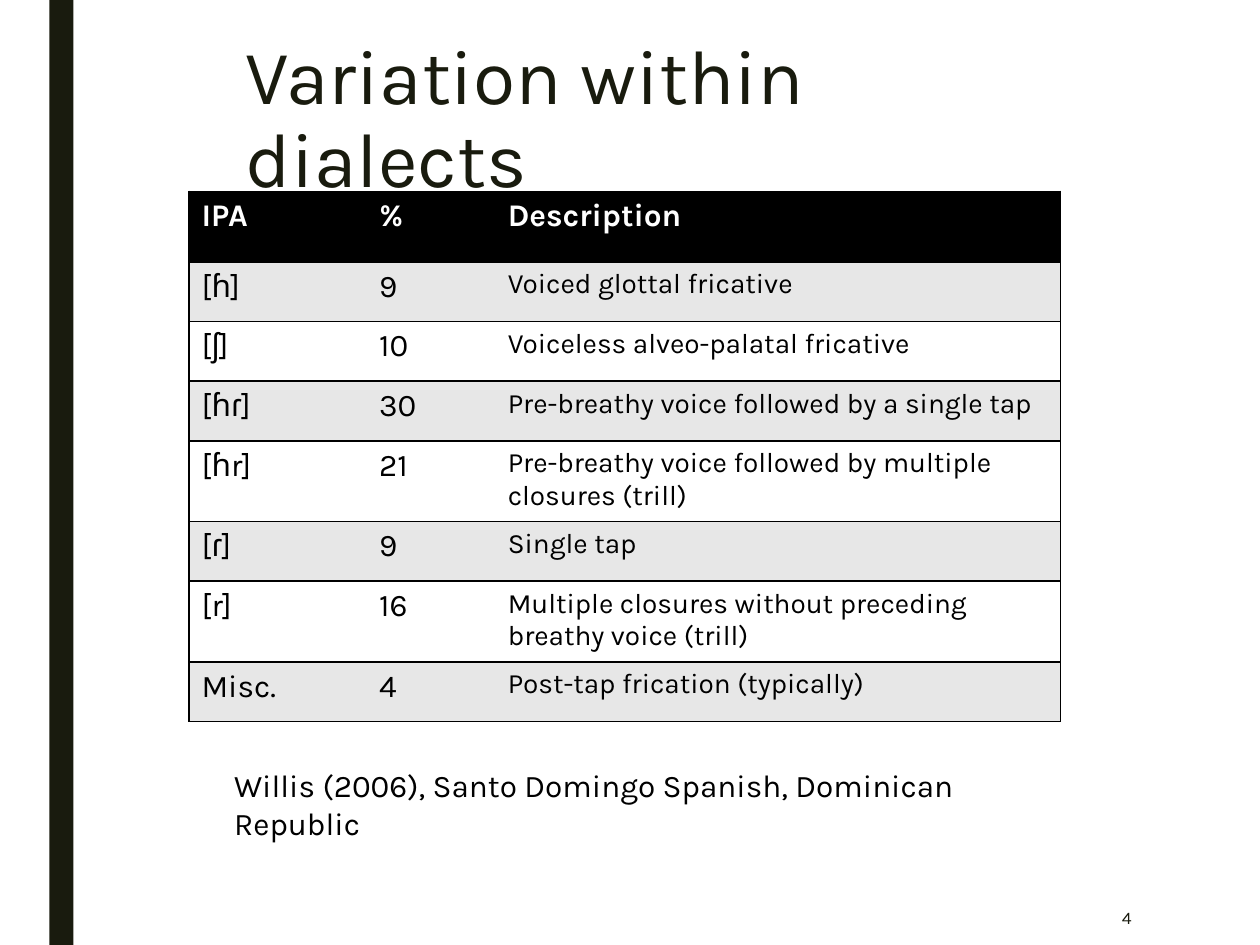
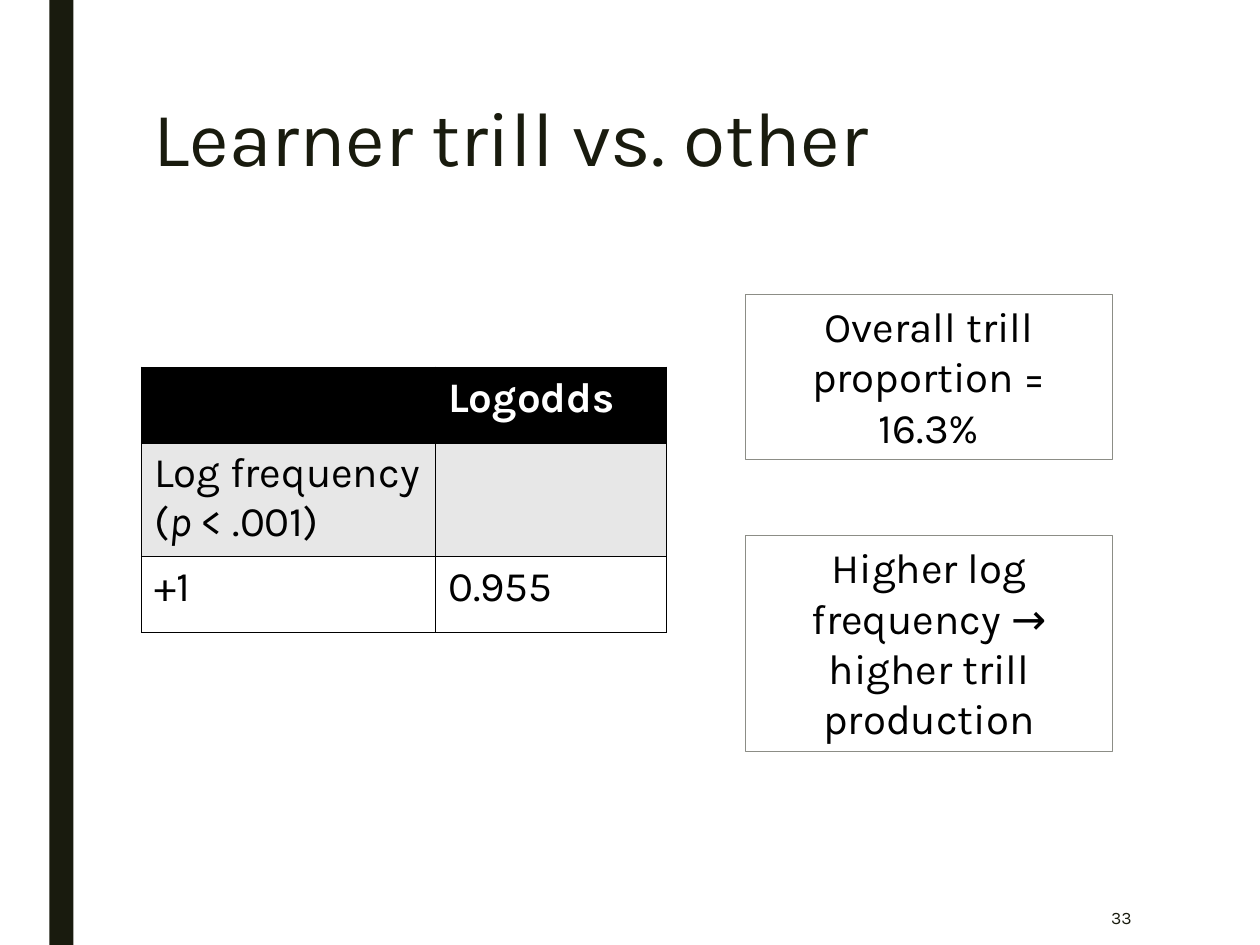
from lxml import etree
from pptx import Presentation
from pptx.dml.color import RGBColor
from pptx.enum.shapes import MSO_SHAPE
from pptx.enum.text import MSO_ANCHOR, MSO_AUTO_SIZE, PP_ALIGN
from pptx.oxml.ns import qn
from pptx.util import Pt

RECT = MSO_SHAPE.RECTANGLE
TOP, MIDDLE = MSO_ANCHOR.TOP, MSO_ANCHOR.MIDDLE
LEFT, CENTER, RIGHT = PP_ALIGN.LEFT, PP_ALIGN.CENTER, PP_ALIGN.RIGHT
FIXED = MSO_AUTO_SIZE.NONE

FONT = "Karla"
DARK, BLACK, WHITE = "191B0E", "000000", "FFFFFF"
STRIPE, FRAME = "E7E7E7", "8C8D86"
TITLE_ONLY = 5
paint = RGBColor.from_string


def write(frame, text, size, color=BLACK, align=LEFT, bold=False, italic=False):
    """Add one run to the first paragraph of a text frame."""
    para = frame.paragraphs[0]
    para.alignment = align
    run = para.add_run()
    run.text = text
    font = run.font
    font.name, font.size = FONT, Pt(size)
    font.bold, font.italic = bold, italic
    font.color.rgb = paint(color)


def add_grid(slide, left, top, widths, heights, rows, sizes, inner):
    """Add a striped table; each cell is a list of (text, italic) runs or a string."""
    last = len(widths) - 1
    table = slide.shapes.add_table(
        len(rows), len(widths), Pt(left), Pt(top), Pt(sum(widths)), Pt(sum(heights))
    ).table
    for col, width in zip(table.columns, widths):
        col.width = Pt(width)
    for r, (row, height) in enumerate(zip(rows, heights)):
        table.rows[r].height = Pt(height)
        back = BLACK if r == 0 else STRIPE if r % 2 else WHITE
        for c, entry in enumerate(row):
            cell = table.cell(r, c)
            cell.fill.solid()
            cell.fill.fore_color.rgb = paint(back)
            size = sizes[0] if r == 0 else sizes[c]
            parts = [(entry, False)] if isinstance(entry, str) else entry
            for text, italic in parts:
                if text:
                    write(cell.text_frame, text, size, WHITE if r == 0 else BLACK,
                          bold=r == 0, italic=italic)
            # Borders come before the fill in the cell properties
            shown = {"a:lnL": inner or c == 0, "a:lnR": inner or c == last,
                     "a:lnT": True, "a:lnB": True}
            props = cell._tc.get_or_add_tcPr()
            for i, (side, show) in enumerate(shown.items()):
                line = etree.Element(qn(side), w=str(Pt(1)))
                props.insert(i, line)
                if show:
                    solid = etree.SubElement(line, qn("a:solidFill"))
                    etree.SubElement(solid, qn("a:srgbClr"), val=BLACK)
                else:
                    etree.SubElement(line, qn("a:noFill"))


deck = Presentation()
deck.slide_width, deck.slide_height = Pt(720), Pt(540)

# Shared parts: side band, title and page number
pages = [
    ("Variation within dialects", (133.2, 18.7, 489.6, 69.1), "4"),
    ("Learner trill vs. other", (80.6, 54, 567.4, 116.6), "33"),
]
slides = []
for name, place, number in pages:
    slide = deck.slides.add_slide(deck.slide_layouts[TITLE_ONLY])
    slides.append(slide)

    band = slide.shapes.add_shape(RECT, Pt(28.2), 0, Pt(13.7), Pt(540))
    band.shadow.inherit = False
    band.fill.solid()
    band.fill.fore_color.rgb = paint(DARK)
    band.line.fill.background()

    title = slide.shapes.title
    title.left, title.top, title.width, title.height = map(Pt, place)
    frame = title.text_frame
    frame.auto_size, frame.vertical_anchor = FIXED, TOP
    frame.paragraphs[0].line_spacing = 0.89
    write(frame, name, 44, DARK)

    frame = slide.shapes.add_textbox(Pt(559.4), Pt(508.3), Pt(94.3), Pt(31.7)).text_frame
    frame.word_wrap, frame.vertical_anchor = True, MIDDLE
    write(frame, number, 10, DARK, RIGHT)

dialects, learners = slides

# Dialects: table of variants and its source
variants = [
    ("IPA", "%", "Description"),
    ("[ɦ]", "9", "Voiced glottal fricative"),
    ("[ʃ]", "10", "Voiceless alveo-palatal fricative"),
    ("[ɦɾ]", "30", "Pre-breathy voice followed by a single tap"),
    ("[ɦr]", "21", "Pre-breathy voice followed by multiple closures (trill)"),
    ("[ɾ]", "9", "Single tap"),
    ("[r]", "16", "Multiple closures without preceding breathy voice (trill)"),
    ("Misc.", "4", "Post-tap frication (typically)"),
]
one, two = 34.1, 46.2
add_grid(dialects, 108, 109.4, (101.5, 73.5, 323),
         (40.3, one, one, one, two, one, two, one), variants, (18, 18, 16), False)

frame = dialects.shapes.add_textbox(Pt(126.7), Pt(434.2), Pt(473), Pt(29)).text_frame
frame.word_wrap = True
write(frame, "Willis (2006), Santo Domingo Spanish, Dominican Republic", 18)

# Learners: table of log odds
odds = [
    ("", "Logodds"),
    ([("Log frequency (", False), ("p ", True), ("< .001)", False)], ""),
    ("+1", "0.955"),
]
add_grid(learners, 80.9, 210, (168, 132), (43.3, 63.4, 43.3), odds, (24, 24), True)

# Learners: framed findings
notes = [
    ("Overall trill proportion = 16.3%", 168.2, 94.5),
    ("Higher log frequency → higher trill production", 306, 123.6),
]
for text, top, height in notes:
    box = learners.shapes.add_shape(RECT, Pt(425.9), Pt(top), Pt(210), Pt(height))
    box.shadow.inherit = False
    box.fill.background()
    box.line.color.rgb = paint(FRAME)
    box.line.width = Pt(0.75)
    frame = box.text_frame
    frame.word_wrap, frame.vertical_anchor = True, TOP
    write(frame, text, 24, align=CENTER)

deck.save("out.pptx")
